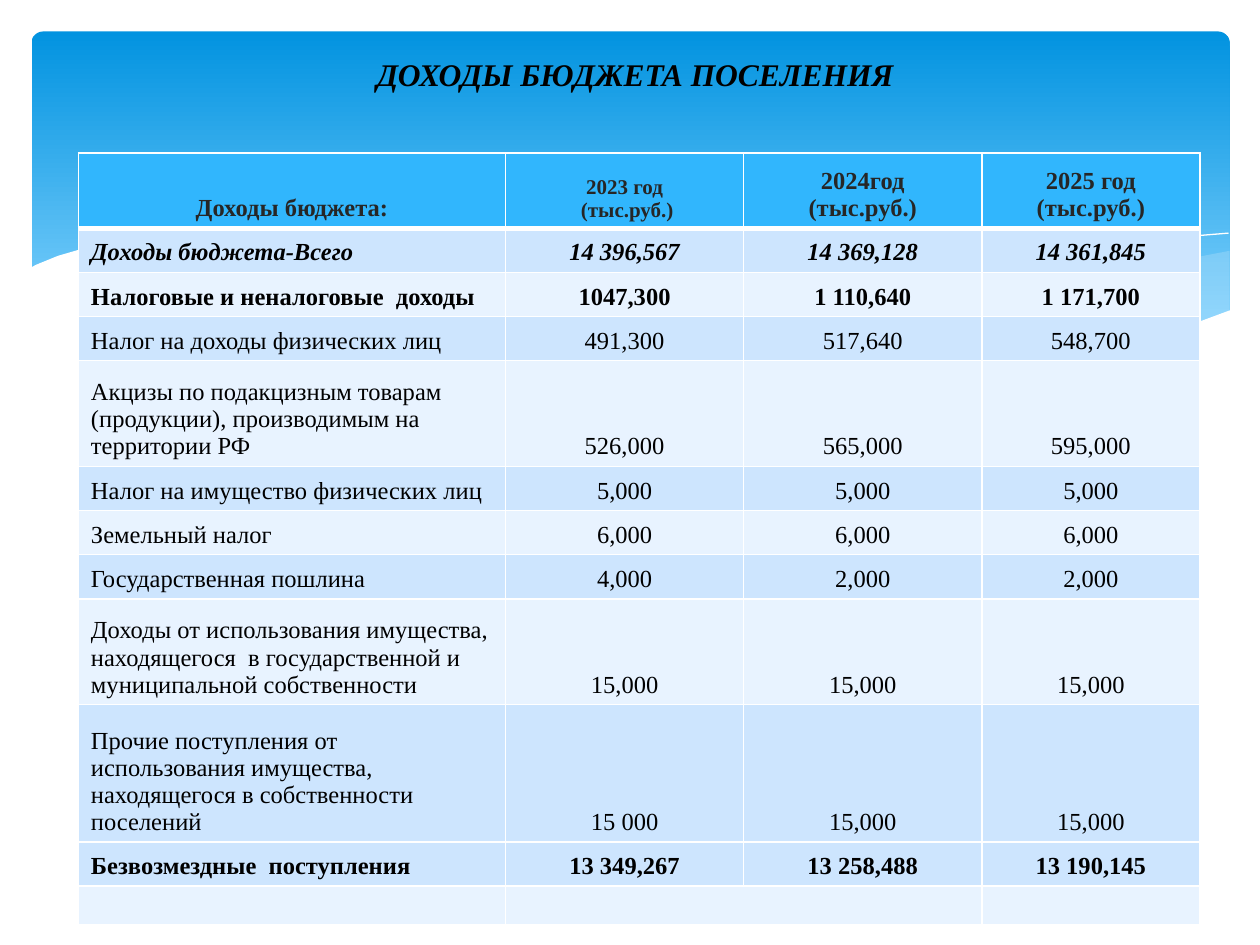
from lxml import etree
from pptx import Presentation
from pptx.dml.color import RGBColor
from pptx.enum.shapes import MSO_SHAPE
from pptx.enum.text import MSO_ANCHOR, MSO_AUTO_SIZE, PP_ALIGN
from pptx.oxml.ns import qn
from pptx.util import Pt

ROUND_RECT = MSO_SHAPE.ROUNDED_RECTANGLE
BOTTOM = MSO_ANCHOR.BOTTOM
FIT_SHAPE = MSO_AUTO_SIZE.SHAPE_TO_FIT_TEXT
LEFT, CENTER = PP_ALIGN.LEFT, PP_ALIGN.CENTER

FONT = "Times New Roman"
WHITE, BLACK, HEADER_TEXT = "FFFFFF", "000000", "262626"
HEADER_FILL, DARK_BAND, LIGHT_BAND = "31B6FD", "CDE5FE", "E8F3FF"
WAVE = "C6E7FC"

RIGHT_WAVE = [
    (702.7, 143.3), (673.2, 149), (641.5, 155.5), (620, 160.6), (579.6, 170.6),
    (542.2, 178.6), (508.3, 185), (475.9, 190.8), (507.6, 195.1), (545, 198.7),
    (578.2, 200.2), (614.9, 198.7), (645.8, 194.4), (673.2, 187.9),
    (693.4, 181.4), (702.7, 177.8)]
MIDDLE_WAVE = [
    (643, 196.6), (602.6, 190.8), (558, 182.9), (508.3, 172.8), (452.9, 159.8),
    (409.7, 149.8), (370.1, 142.6), (334.8, 137.5), (302.4, 134.6),
    (273.6, 133.9), (236.2, 134.6), (205.9, 137.5), (246.2, 143.3),
    (290.9, 151.9), (323.3, 159.8), (381.6, 172.8), (432.7, 183.6),
    (478.8, 191.5), (519.8, 197.3), (556.6, 199.4), (589, 200.2), (617, 199.4)]
FALLING_LINE = [
    (222.5, 140.4), (247.7, 136.8), (288.7, 134.6), (337.7, 136.1),
    (383.8, 139.7), (437.8, 146.9), (500.4, 157.7), (547.2, 167.8),
    (598.3, 180.7), (653, 195.8)]
RISING_LINE = [
    (441.4, 185), (500.4, 169.2), (558.7, 155.5), (601.9, 146.9),
    (644.4, 139.7), (675.4, 135.4), (702, 133.2)]
WHITE_WAVE = [
    (703.4, 177.1), (684, 184.3), (662.4, 190.8), (638.6, 195.1), (612, 198),
    (582.5, 199.4), (547.9, 198), (509.8, 194.4), (465.8, 188.6), (416.9, 180),
    (362.2, 167.8), (321.8, 158.4), (262.8, 145.4), (210.2, 137.5),
    (165.6, 133.2), (127.4, 132.5), (95, 133.9), (68.4, 137.5), (48.2, 141.8),
    (33.1, 146.2), (20.9, 151.2), (16.6, 153.4), (16.6, 236.9), (703.4, 236.9)]

COLUMN_WIDTHS = [244.1, 136.1, 136.1, 124.6]
ONE_LINE, THREE_LINES, FOUR_LINES = 25.2, 60.5, 78.5
HEADER = ["Доходы бюджета:", "2023 год\n (тыс.руб.)", "2024год\n(тыс.руб.)",
          "2025 год\n(тыс.руб.)"]
# Row height, band, bold, italic, cell texts
INCOME_ROWS = [
    (ONE_LINE, DARK_BAND, True, True,
     ["Доходы бюджета-Всего", "14 396,567", "14 369,128", "14 361,845"]),
    (ONE_LINE, LIGHT_BAND, True, False,
     ["Налоговые и неналоговые  доходы", "1047,300", "1 110,640", "1 171,700"]),
    (ONE_LINE, DARK_BAND, False, False,
     ["Налог на доходы физических лиц", "491,300", "517,640", "548,700"]),
    (THREE_LINES, LIGHT_BAND, False, False,
     ["Акцизы по подакцизным товарам (продукции), производимым на территории РФ",
      "526,000", "565,000", "595,000"]),
    (ONE_LINE, DARK_BAND, False, False,
     ["Налог на имущество физических лиц", "5,000", "5,000", "5,000"]),
    (ONE_LINE, LIGHT_BAND, False, False,
     ["Земельный налог", "6,000", "6,000", "6,000"]),
    (ONE_LINE, DARK_BAND, False, False,
     ["Государственная пошлина", "4,000", "2,000", "2,000"]),
    (THREE_LINES, LIGHT_BAND, False, False,
     ["Доходы от использования имущества, находящегося  в государственной и "
      "муниципальной собственности", "15,000", "15,000", "15,000"]),
    (FOUR_LINES, DARK_BAND, False, False,
     ["Прочие поступления от использования имущества, находящегося в "
      "собственности поселений", "15 000", "15,000", "15,000"]),
    (ONE_LINE, DARK_BAND, True, False,
     ["Безвозмездные  поступления", "13 349,267", "13 258,488", "13 190,145"]),
    (11.5, LIGHT_BAND, False, False, ["", "", "", ""]),
]


def rgb(color):
    return RGBColor.from_string(color)


def set_fill(target, color):
    target.fill.solid()
    target.fill.fore_color.rgb = rgb(color)


def format_text(frame, size, color, bold, italic, align):
    for paragraph in frame.paragraphs:
        paragraph.alignment = align
        for run in paragraph.runs:
            font = run.font
            font.name, font.size = FONT, Pt(size)
            font.bold, font.italic = bold, italic
            font.color.rgb = rgb(color)


def add_backdrop(slide):
    backdrop = slide.shapes.add_shape(ROUND_RECT, Pt(18), Pt(18), Pt(684.7), Pt(194.4))
    backdrop.shadow.inherit = False
    backdrop.adjustments[0] = 0.034
    backdrop.line.fill.background()
    backdrop.fill.gradient()
    backdrop.fill.gradient_angle = 270
    stops = [(0, "0293E0"), (0.9, "83D3FE")]
    for stop, (position, color) in zip(backdrop.fill.gradient_stops, stops):
        stop.position = position
        stop.color.rgb = rgb(color)


def add_curve(slide, points, closed):
    start, *rest = [(Pt(x), Pt(y)) for x, y in points]
    builder = slide.shapes.build_freeform(*start)
    builder.add_line_segments(rest, close=closed)
    curve = builder.convert_to_shape()
    curve.shadow.inherit = False
    return curve


def add_wave(slide, points, color, opacity=100):
    wave = add_curve(slide, points, True)
    wave.line.fill.background()
    set_fill(wave, color)
    if opacity < 100:
        srgb = wave.fill._xPr.find(".//" + qn("a:srgbClr"))
        etree.SubElement(srgb, qn("a:alpha"), val=str(opacity * 1000))


def add_wave_line(slide, points):
    line = add_curve(slide, points, False)
    line.fill.background()
    line.line.color.rgb = rgb(WHITE)
    line.line.width = Pt(0)


def set_borders(cell, top, bottom):
    properties = cell._tc.get_or_add_tcPr()
    widths = {"a:lnL": 1, "a:lnR": 1, "a:lnT": top, "a:lnB": bottom}
    for index, (side, width) in enumerate(widths.items()):
        border = etree.Element(qn(side), w=str(Pt(width)))
        solid = etree.SubElement(border, qn("a:solidFill"))
        etree.SubElement(solid, qn("a:srgbClr"), val=WHITE)
        properties.insert(index, border)


def fill_cell(cell, text, fill, size, color, bold, italic, align):
    cell.vertical_anchor = BOTTOM
    set_fill(cell, fill)
    if text:
        cell.text_frame.text = text
        format_text(cell.text_frame, size, color, bold, italic, align)
    else:
        paragraph = cell.text_frame.paragraphs[0]._p
        etree.SubElement(paragraph, qn("a:endParaRPr"), sz="1200")


def add_income_table(slide):
    heights = [43.2] + [row[0] for row in INCOME_ROWS]
    table = slide.shapes.add_table(
        len(heights), len(COLUMN_WIDTHS), Pt(44.8), Pt(87.3),
        Pt(sum(COLUMN_WIDTHS)), Pt(sum(heights))).table
    for column, width in zip(table.columns, COLUMN_WIDTHS):
        column.width = Pt(width)
    for row, height in zip(table.rows, heights):
        row.height = Pt(height)
    for column, text in enumerate(HEADER):
        cell = table.cell(0, column)
        size = 12 if column == 1 else 14
        fill_cell(cell, text, HEADER_FILL, size, HEADER_TEXT, True, False, CENTER)
        set_borders(cell, 1, 3)
    for row, (_, band, bold, italic, texts) in enumerate(INCOME_ROWS, 1):
        for column, text in enumerate(texts):
            cell = table.cell(row, column)
            align = CENTER if column else LEFT
            fill_cell(cell, text, band, 14, BLACK, bold, italic, align)
            set_borders(cell, 3 if row == 1 else 1, 1)
    last = len(INCOME_ROWS)
    table.cell(last, 1).merge(table.cell(last, 2))


def add_title(slide):
    title = slide.shapes.add_textbox(Pt(208.1), Pt(28.1), Pt(312.5), Pt(28.8))
    frame = title.text_frame
    frame.word_wrap = False
    frame.auto_size = FIT_SHAPE
    frame.text = "ДОХОДЫ БЮДЖЕТА ПОСЕЛЕНИЯ"
    format_text(frame, 18, BLACK, True, True, LEFT)


def main():
    presentation = Presentation()
    presentation.slide_width, presentation.slide_height = Pt(720), Pt(540)
    slide = presentation.slides.add_slide(presentation.slide_layouts[6])
    add_backdrop(slide)
    add_wave(slide, RIGHT_WAVE, WAVE, 29)
    add_wave(slide, MIDDLE_WAVE, WAVE, 40)
    add_wave_line(slide, FALLING_LINE)
    add_wave_line(slide, RISING_LINE)
    add_wave(slide, WHITE_WAVE, WHITE)
    add_income_table(slide)
    add_title(slide)
    presentation.save("out.pptx")


if __name__ == "__main__":
    main()
